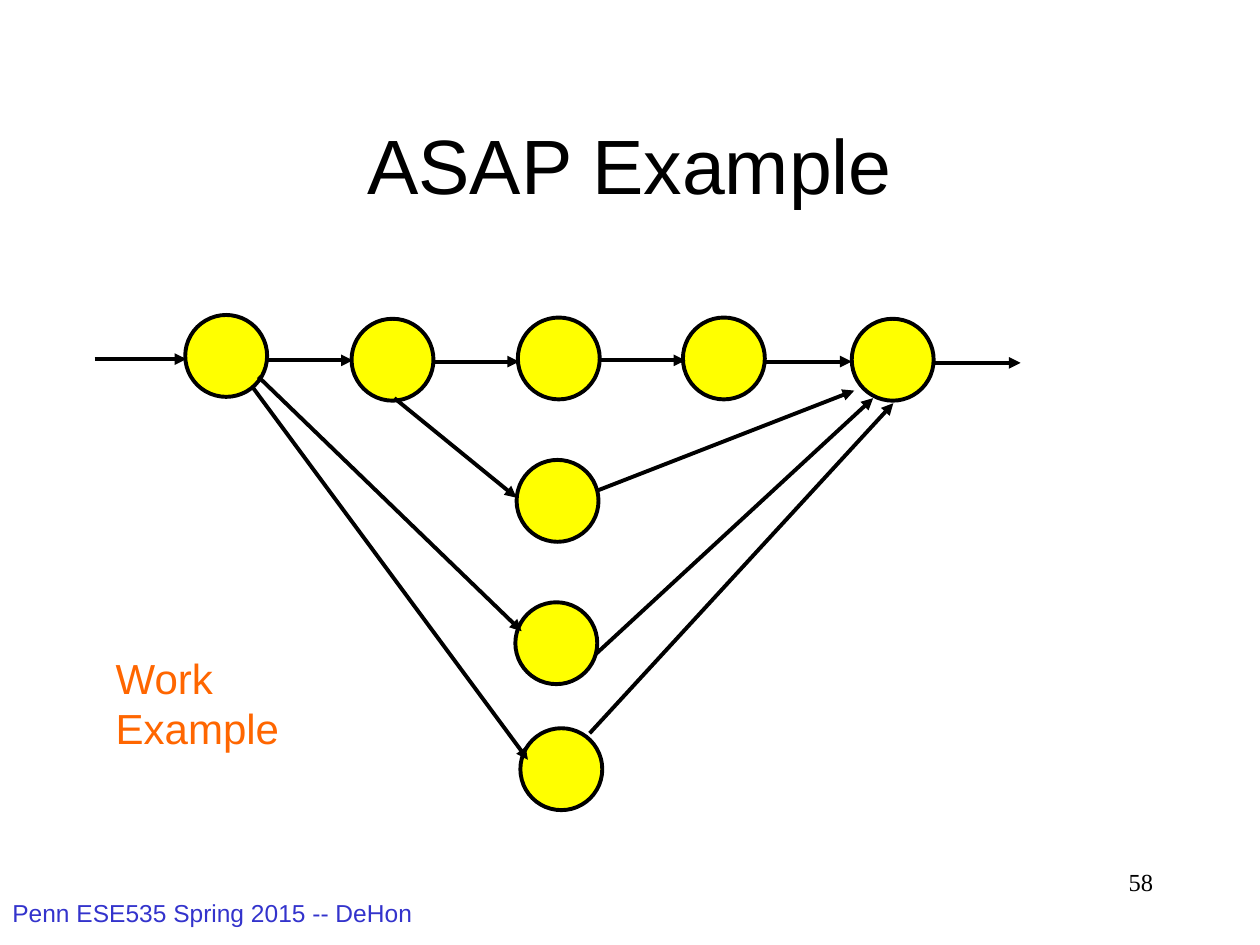
import typing

import lxml.etree
import pptx
import pptx.dml.color
import pptx.enum.shapes
import pptx.enum.text
import pptx.oxml.ns
import pptx.util

PX = 9144  # EMU per px, 100 px to the inch
NODE_SIZE = 65
LINE_WIDTH = pptx.util.Pt(2.25)
BLACK = "000000"
YELLOW = "FFFF00"
ALIGN = pptx.enum.text.PP_ALIGN
ANCHOR = pptx.enum.text.MSO_ANCHOR


class Node(typing.NamedTuple):
    left: int
    top: int


class Arrow(typing.NamedTuple):
    x1: int
    y1: int
    x2: int
    y2: int


NODES = [
    # critical path
    Node(147, 250), Node(279, 253), Node(411, 252), Node(542, 252), Node(676, 253),
    # side branches
    Node(410, 365), Node(409, 478), Node(413, 578),
]

ARROWS = [
    # along the critical path
    Arrow(75, 285, 148, 285),
    Arrow(212, 286, 280, 286),
    Arrow(344, 287, 412, 287),
    Arrow(476, 286, 544, 286),
    Arrow(608, 287, 676, 287),
    Arrow(742, 288, 810, 288),
    # out to the side branches
    Arrow(313, 316, 410, 395),
    Arrow(205, 299, 414, 501),
    Arrow(201, 308, 419, 603),
    # back from the side branches
    Arrow(475, 389, 678, 310),
    Arrow(473, 519, 693, 316),
    Arrow(468, 582, 709, 320),
]


def px(length: int) -> pptx.util.Emu:
    return pptx.util.Emu(length * PX)


def colour(value: str) -> pptx.dml.color.RGBColor:
    return pptx.dml.color.RGBColor.from_string(value)


def add_text(page, text: str, left: int, top: int, width: int, height: int, *,
             size: int, color: str = BLACK, font: str = "Arial",
             align=ALIGN.LEFT, anchor=ANCHOR.TOP, wrap: bool = True) -> None:
    """Add a text box with one paragraph for each line of text."""
    box = page.shapes.add_textbox(px(left), px(top), px(width), px(height))
    frame = box.text_frame
    frame.word_wrap = wrap
    frame.vertical_anchor = anchor
    frame.text = text
    for para in frame.paragraphs:
        para.alignment = align
        for span in para.runs:
            span.font.name = font
            span.font.size = pptx.util.Pt(size)
            span.font.color.rgb = colour(color)


def add_node(page, node: Node) -> None:
    circle = page.shapes.add_shape(
        pptx.enum.shapes.MSO_SHAPE.OVAL,
        px(node.left), px(node.top), px(NODE_SIZE), px(NODE_SIZE))
    circle.shadow.inherit = False
    circle.fill.solid()
    circle.fill.fore_color.rgb = colour(YELLOW)
    circle.line.color.rgb = colour(BLACK)
    circle.line.width = LINE_WIDTH


def add_arrow(page, arrow: Arrow) -> None:
    connector = page.shapes.add_connector(
        pptx.enum.shapes.MSO_CONNECTOR.STRAIGHT, *map(px, arrow))
    connector.line.color.rgb = colour(BLACK)
    connector.line.width = LINE_WIDTH
    qn = pptx.oxml.ns.qn
    properties = connector._element.spPr
    outline = properties.find(qn("a:ln"))
    lxml.etree.SubElement(outline, qn("a:tailEnd"), type="triangle")
    lxml.etree.SubElement(properties, qn("a:effectLst"))


def main() -> None:
    deck = pptx.Presentation()
    deck.slide_width, deck.slide_height = px(1000), px(750)
    page = deck.slides.add_slide(deck.slide_layouts[6])

    add_text(page, "Penn ESE535 Spring 2015 -- DeHon", 0, 708, 383, 42,
             size=14, color="3333CC")
    add_text(page, "58", 717, 683, 208, 50,
             size=14, font="Times New Roman", align=ALIGN.RIGHT)
    add_text(page, "ASAP Example", 75, 67, 850, 125,
             size=44, align=ALIGN.CENTER, anchor=ANCHOR.MIDDLE)
    for node in NODES:
        add_node(page, node)
    for arrow in ARROWS:
        add_arrow(page, arrow)
    add_text(page, "Work\nExample", 82, 513, 151, 91,
             size=24, color="FF6600", wrap=False)

    deck.save("out.pptx")


if __name__ == "__main__":
    main()
